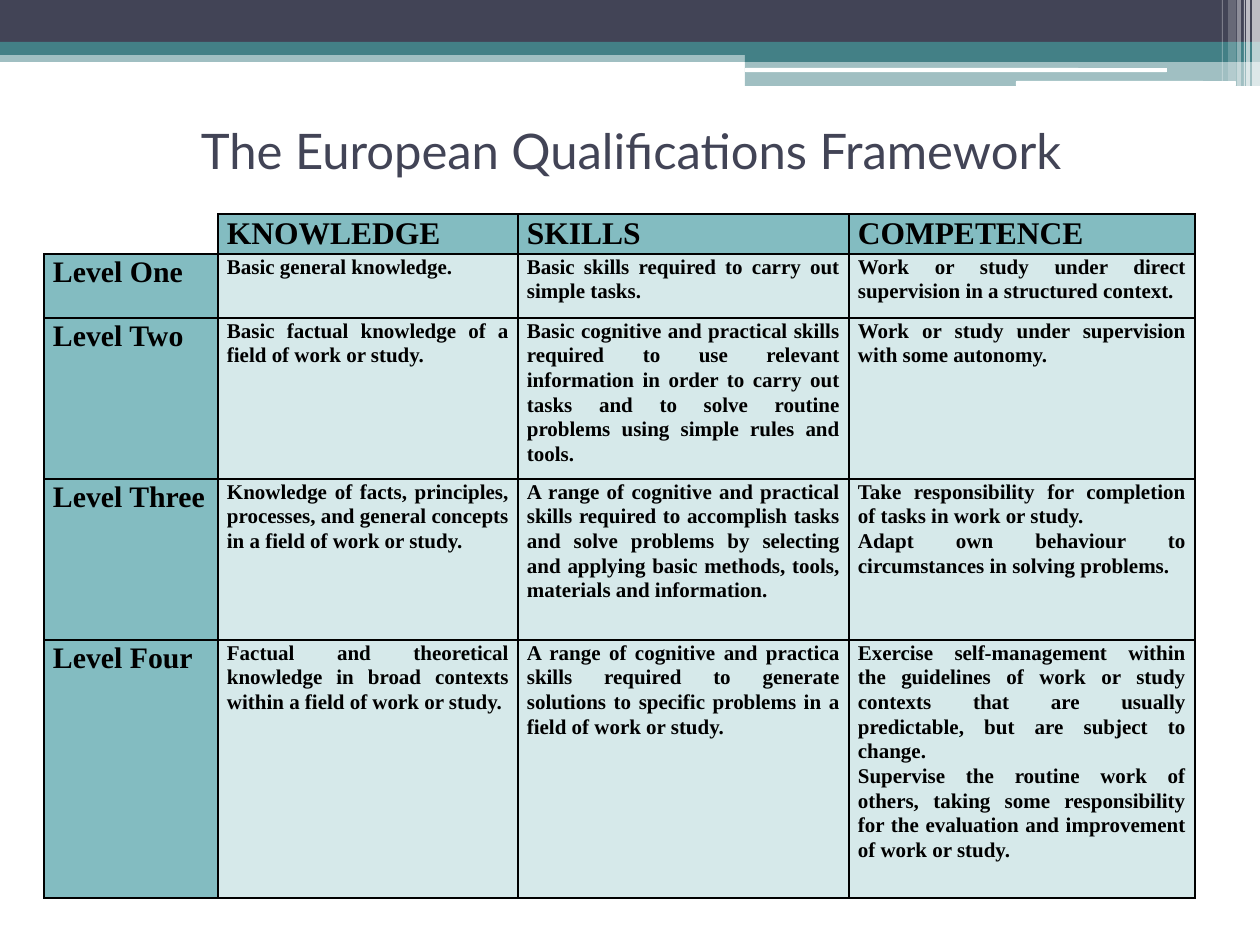
from lxml.etree import SubElement
from pptx import Presentation
from pptx.dml.color import RGBColor
from pptx.enum.shapes import MSO_SHAPE
from pptx.enum.text import MSO_ANCHOR, MSO_AUTO_SIZE, PP_ALIGN
from pptx.oxml.ns import qn
from pptx.util import Emu, Pt

SLATE = RGBColor(0x42, 0x44, 0x56)
TEAL = RGBColor(0x43, 0x80, 0x86)
MID = RGBColor(0x83, 0xBC, 0xC1)
PALE = RGBColor(0xD6, 0xE9, 0xEA)
WHITE = RGBColor(0xFF, 0xFF, 0xFF)
BLACK = RGBColor(0, 0, 0)

COLS = [174, 300, 331, 346]
ROWS = [40, 64, 161, 161, 258]
CELLS = [
    ["", "KNOWLEDGE", "SKILLS", "COMPETENCE"],
    ["Level One",
     "Basic general knowledge.",
     "Basic skills required to carry out simple tasks.",
     "Work or study under direct supervision in a structured context."],
    ["Level Two",
     "Basic factual knowledge of a field of work or study.",
     "Basic cognitive and practical skills required to use relevant information "
     "in order to carry out tasks and to solve routine problems using simple rules and tools.",
     "Work or study under supervision with some autonomy."],
    ["Level Three",
     "Knowledge of facts, principles, processes, and general concepts "
     "in a field of work or study.",
     "A range of cognitive and practical skills required to accomplish tasks and solve "
     "problems by selecting and applying basic methods, tools, materials and information.",
     "Take responsibility for completion of tasks in work or study.\n"
     "Adapt own behaviour to circumstances in solving problems."],
    ["Level Four",
     "Factual and theoretical knowledge in broad contexts within a field of work or study.",
     "A range of cognitive and practica skills required to generate solutions "
     "to specific problems in a field of work or study.",
     "Exercise self-management within the guidelines of work or study contexts "
     "that are usually predictable, but are subject to change.\n"
     "Supervise the routine work of others, taking some responsibility "
     "for the evaluation and improvement of work or study."],
]


def px(count):
    return Emu(round(count * 914400 / 126))


def write(frame, text, size, font="Times New Roman", color=BLACK, bold=True,
          align=PP_ALIGN.JUSTIFY, space=1.06):
    frame.word_wrap = True
    for i, line in enumerate(text.split("\n")):
        para = frame.add_paragraph() if i else frame.paragraphs[0]
        para.alignment = align
        para.line_spacing = space
        run = para.add_run()
        run.text = line
        run.font.size = Pt(size)
        run.font.name = font
        run.font.bold = bold
        run.font.color.rgb = color


def bar(slide, box, color, alpha=100, kind=MSO_SHAPE.RECTANGLE):
    shape = slide.shapes.add_shape(kind, *map(px, box))
    shape.shadow.inherit = False
    shape.line.fill.background()
    shape.fill.solid()
    shape.fill.fore_color.rgb = color
    if alpha < 100:
        tint = shape.element.spPr.find(qn("a:solidFill"))[0]
        SubElement(tint, qn("a:alpha"), val=str(alpha * 1000))


def banner(slide, left, top, width):
    bar(slide, (left, top + 50, width, 12), TEAL, 50)
    bar(slide, (left, top, width, 43), SLATE)
    bar(slide, (left, top + 42, width, 13), TEAL)
    half = left + 745
    end = left + width
    bar(slide, (half, top + 49, end - half, 13), TEAL)
    bar(slide, (half, top + 61, end - half, 25), TEAL, 50)
    for x, y, wide, high in [(745, 68, 422, 4), (1016, 81, 220, 5)]:
        bar(slide, (left + x, top + y, wide, high), WHITE, kind=MSO_SHAPE.ROUNDED_RECTANGLE)
    stripes = [(8, 8, 86, 65), (14, 4, 86, 65), (16, 1, 86, 60),
               (23, 4, 86, 40), (32, 8, 81, 20), (38, 1, 81, 30)]
    for back, wide, high, alpha in stripes:
        bar(slide, (end - back, top, wide, high), WHITE, alpha)


def heading(slide, left, top, width, height):
    title = slide.shapes.title
    title.left, title.top, title.width, title.height = map(px, (left, top, width, height))
    frame = title.text_frame
    frame.auto_size = MSO_AUTO_SIZE.NONE
    frame.vertical_anchor = MSO_ANCHOR.MIDDLE
    write(frame, "The European Qualifications Framework", 28, font="Lato",
          color=SLATE, bold=False, align=PP_ALIGN.CENTER, space=1)


def edge(cell, sides):
    props = cell._tc.get_or_add_tcPr()
    for side in ("L", "R", "T", "B"):
        line = SubElement(props, qn(f"a:ln{side}"), w=str(Pt(1)))
        if side in sides:
            fill = SubElement(line, qn("a:solidFill"))
            SubElement(fill, qn("a:srgbClr"), val=str(BLACK))
        else:
            SubElement(line, qn("a:noFill"))


def matrix(slide, left, top):
    box = map(px, (left, top, sum(COLS), sum(ROWS)))
    table = slide.shapes.add_table(len(ROWS), len(COLS), *box).table
    table.first_row = table.horz_banding = False
    for col, wide in zip(table.columns, COLS):
        col.width = px(wide)
    for row, high in zip(table.rows, ROWS):
        row.height = px(high)
    for r, texts in enumerate(CELLS):
        for c, text in enumerate(texts):
            cell = table.cell(r, c)
            cell.margin_left = cell.margin_right = px(9)
            cell.margin_top = cell.margin_bottom = 0
            edge(cell, "LRTB" if text else "RB")
            if not text:
                cell.fill.background()
                continue
            cell.fill.solid()
            cell.fill.fore_color.rgb = PALE if r and c else MID
            write(cell.text_frame, text, 18 if r == 0 else 17 if c == 0 else 12)


def main():
    deck = Presentation()
    deck.slide_width, deck.slide_height = px(1260), px(945)
    slide = deck.slides.add_slide(deck.slide_layouts[5])
    banner(slide, 0, 0, 1260)
    matrix(slide, 44, 214)
    heading(slide, 64, 76, 1134, 147)
    deck.save("out.pptx")


if __name__ == "__main__":
    main()
